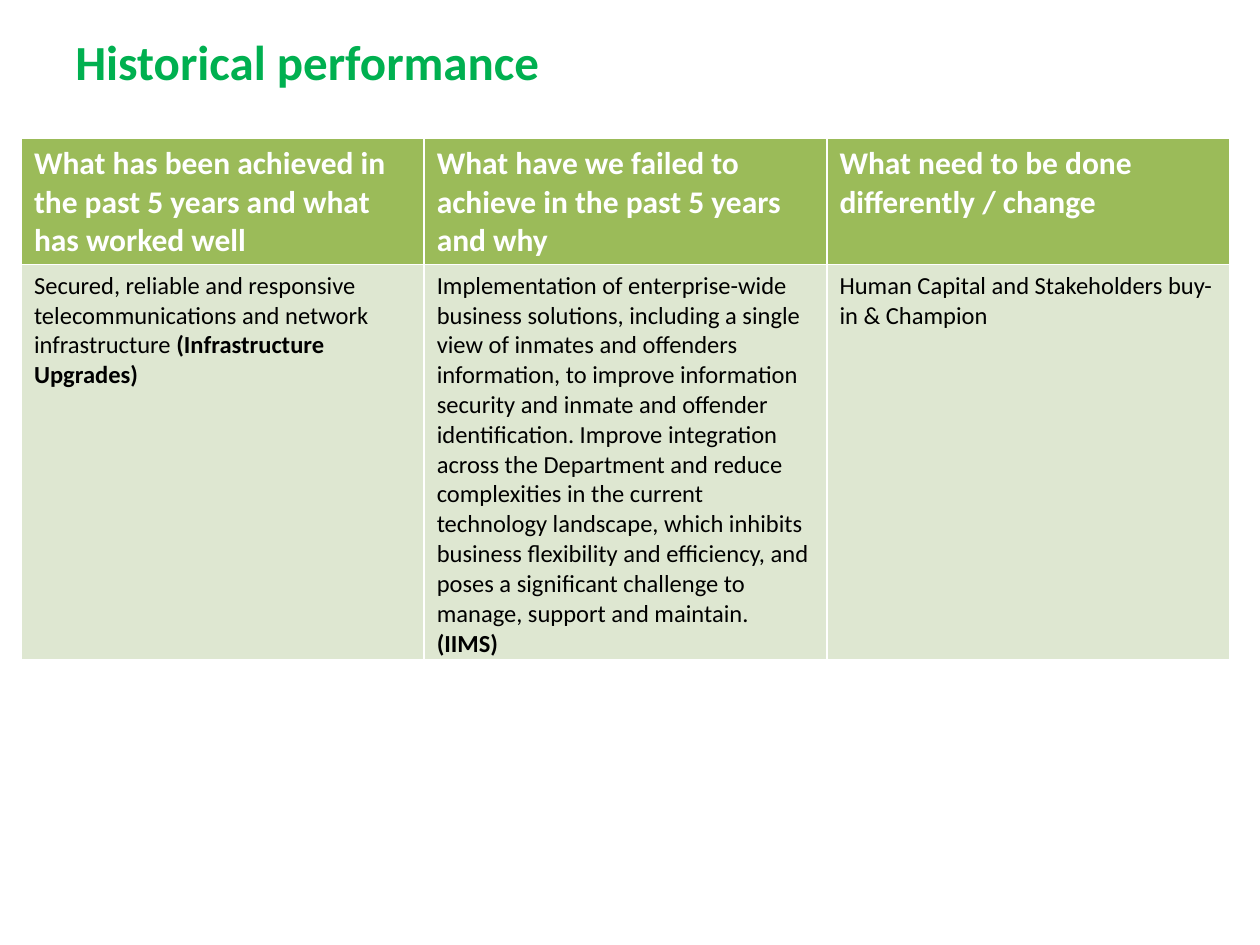
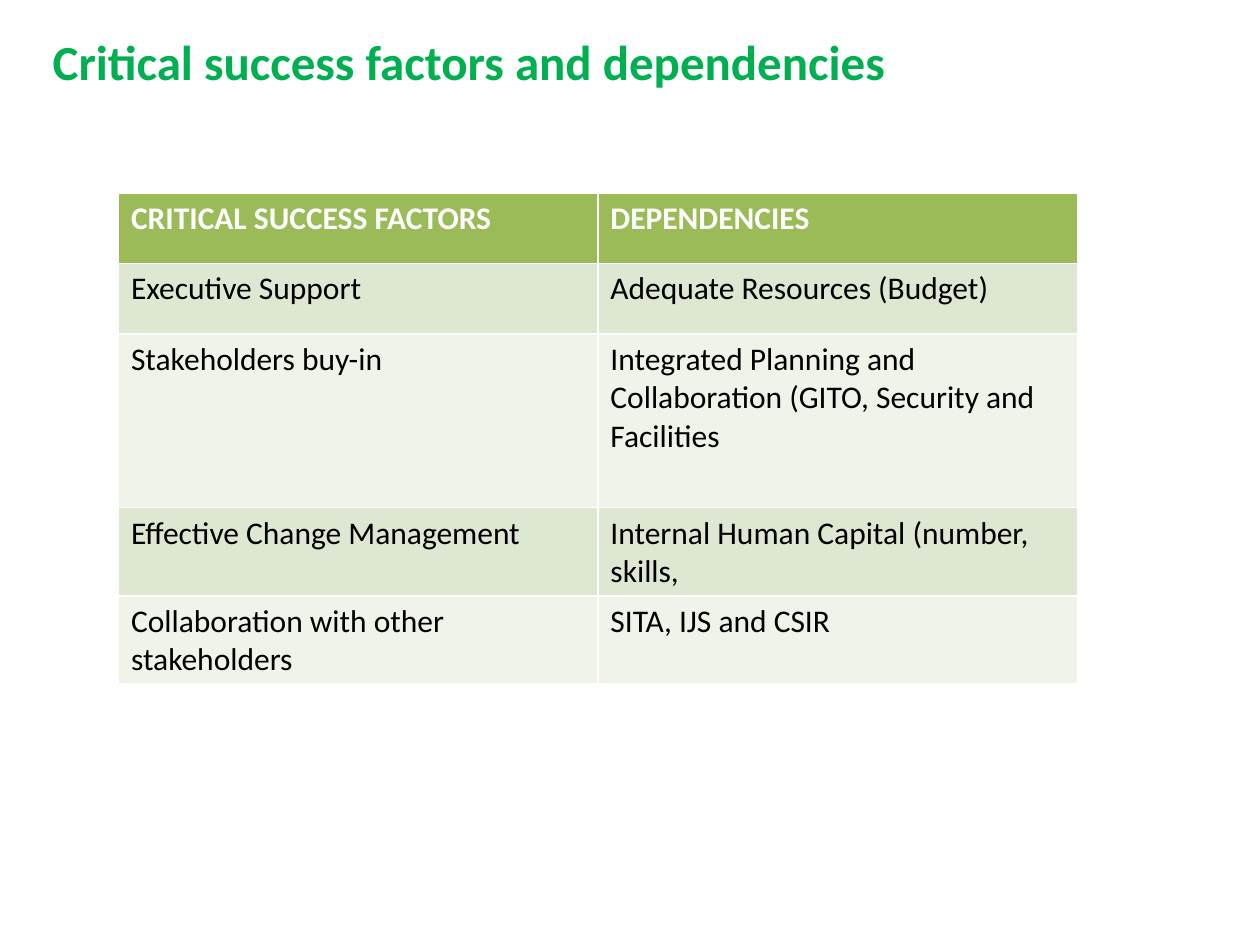
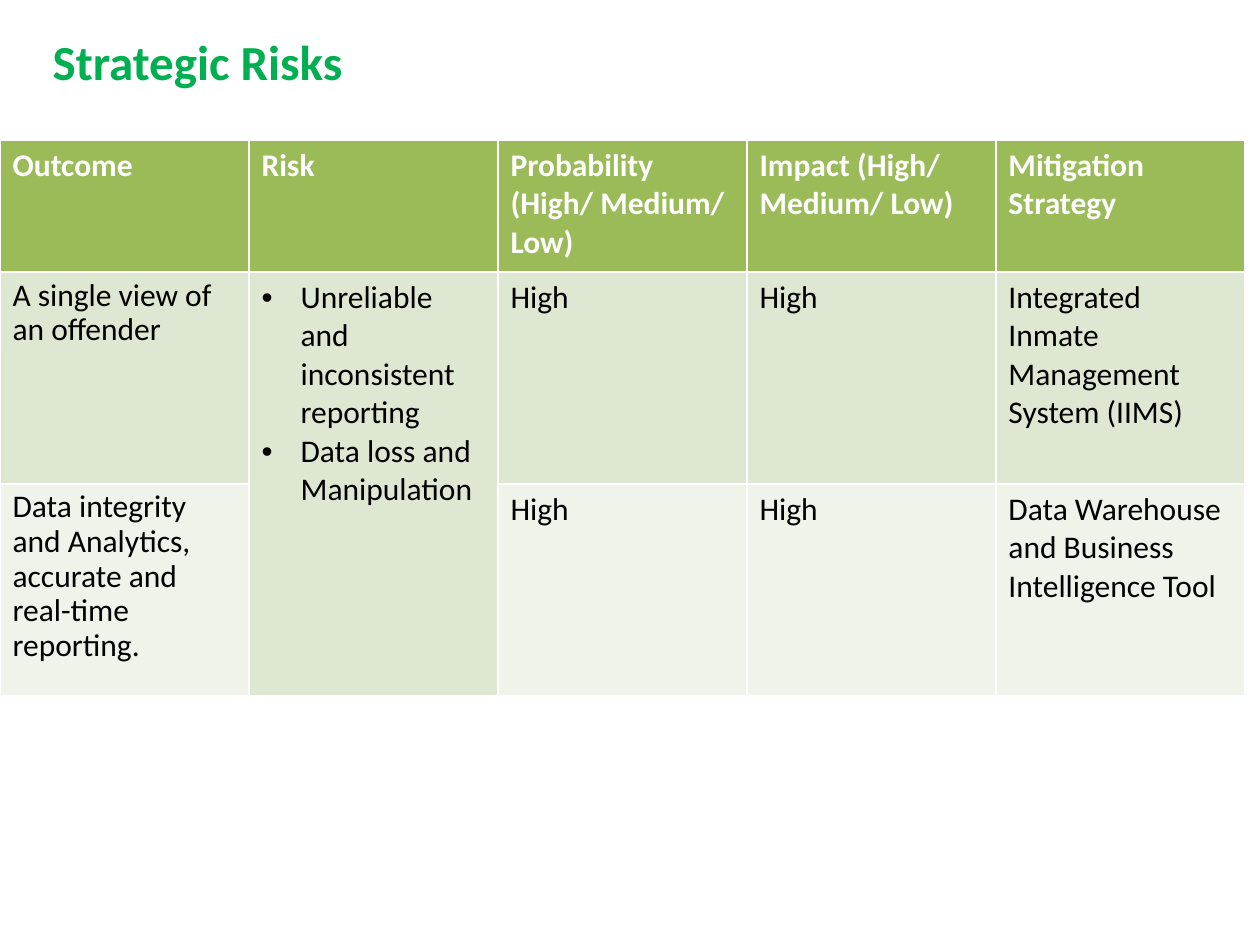
import dataclasses

import pptx
import pptx.dml.color
import pptx.enum.text
import pptx.oxml
import pptx.oxml.ns
import pptx.util

Inches = pptx.util.Inches
Pt = pptx.util.Pt
Color = pptx.dml.color.RGBColor.from_string


@dataclasses.dataclass(frozen=True)
class Theme:
    font: str = "Calibri"
    title: str = "00B050"
    head: str = "9BBB59"
    bands: tuple = ("DEE7D1", "EFF3EA")
    light: str = "FFFFFF"
    dark: str = "000000"
    large: int = 28
    normal: int = 18
    small: int = 14


@dataclasses.dataclass(frozen=True)
class Strong:
    """Plain text followed by a bold ending."""
    text: str
    end: str


class Deck:
    def __init__(self, theme):
        self.theme = theme
        self.show = pptx.Presentation()
        self.show.slide_width = Inches(10)
        self.show.slide_height = Inches(7.5)
        self.slide = None

    def page(self, title, left=0.32, width=9.45):
        self.slide = self.show.slides.add_slide(self.show.slide_layouts[6])
        box = self.slide.shapes.add_textbox(
            Inches(left), Inches(0.2), Inches(width), Inches(0.57))
        frame = box.text_frame
        frame.word_wrap = True
        frame.auto_size = pptx.enum.text.MSO_AUTO_SIZE.SHAPE_TO_FIT_TEXT
        frame.text = title
        self.style(frame.paragraphs[0], self.theme.large, self.theme.title, True)

    def style(self, para, size, color, bold=False):
        font = para.font
        font.name = self.theme.font
        font.size = Pt(size)
        font.bold = bold
        font.color.rgb = Color(color)

    def bullet(self, para):
        props = para._p.get_or_add_pPr()
        props.set("marL", str(Inches(0.31)))
        props.set("indent", str(-Inches(0.31)))
        space = pptx.oxml.ns.nsdecls("a")
        for mark in ('buFont typeface="Arial"', 'buChar char="•"'):
            props.append(pptx.oxml.parse_xml(f"<a:{mark} {space}/>"))

    def paint(self, cell, color):
        cell.fill.solid()
        cell.fill.fore_color.rgb = Color(color)

    def label(self, cell, value, size, color, bold):
        """Set one text, a Strong text, or a list of bullet points."""
        frame = cell.text_frame
        if isinstance(value, Strong):
            para = frame.paragraphs[0]
            para.add_run().text = value.text
            end = para.add_run()
            end.text = value.end
            end.font.bold = True
        elif isinstance(value, list):
            frame.text = "\n".join(value)
            for para in frame.paragraphs:
                self.bullet(para)
        else:
            frame.text = value
        for para in frame.paragraphs:
            self.style(para, size, color, bold)

    def table(self, left, top, width, heights, rows, size=None):
        """Draw a banded table of equal columns; None leaves a cell empty."""
        theme = self.theme
        count = len(rows[0])
        grid = self.slide.shapes.add_table(
            len(rows), count, Inches(left), Inches(top),
            Inches(width), Inches(sum(heights))).table
        for col in grid.columns:
            col.width = Inches(width / count)
        for num, (height, row) in enumerate(zip(heights, rows)):
            grid.rows[num].height = Inches(height)
            for col, value in enumerate(row):
                cell = grid.cell(num, col)
                if num == 0:
                    self.paint(cell, theme.head)
                    self.label(cell, value, theme.normal, theme.light, True)
                    continue
                self.paint(cell, theme.bands[(num - 1) % 2])
                if value is not None:
                    self.label(cell, value, size or theme.normal, theme.dark, False)
        return grid


def history(deck):
    deck.page("Historical performance", 0.5, 9)
    deck.table(0.17, 1.1, 9.59, (1, 3.13), [
        ("What has been achieved in the past 5 years and what has worked well",
         "What have we failed to achieve in the past 5 years and why",
         "What need to be done differently / change"),
        (Strong("Secured, reliable and responsive telecommunications and "
                "network infrastructure ", "(Infrastructure Upgrades)"),
         Strong("Implementation of enterprise-wide business solutions, "
                "including a single view of inmates and offenders information, "
                "to improve information security and inmate and offender "
                "identification. Improve integration across the Department and "
                "reduce complexities in the current technology landscape, which "
                "inhibits business flexibility and efficiency, and poses a "
                "significant challenge to manage, support and maintain. ",
                "(IIMS)"),
         "Human Capital and Stakeholders buy-in & Champion"),
    ], deck.theme.small)


def factors(deck):
    deck.page("Critical success factors and dependencies")
    deck.table(0.94, 1.53, 7.61, (0.56, 0.56, 1.38, 0.7, 0.7), [
        ("CRITICAL SUCCESS FACTORS", "DEPENDENCIES"),
        ("Executive Support", "Adequate Resources (Budget)"),
        ("Stakeholders buy-in",
         "Integrated Planning and Collaboration (GITO, Security and Facilities"),
        ("Effective Change Management", "Internal Human Capital (number, skills,"),
        ("Collaboration with other stakeholders", "SITA, IJS and CSIR"),
    ])


def risks(deck):
    deck.page("Strategic Risks")
    grid = deck.table(0, 1.11, 9.88, (1.05, 1.68, 1.68), [
        ("Outcome", "Risk", "Probability (High/ Medium/ Low)",
         "Impact (High/ Medium/ Low)", "Mitigation Strategy"),
        ("A single view of an offender",
         ["Unreliable and inconsistent reporting", "Data loss and Manipulation"],
         "High", "High", "Integrated Inmate Management System (IIMS)"),
        ("Data integrity and Analytics, accurate and real-time reporting.",
         None, "High", "High", "Data Warehouse and Business Intelligence Tool"),
    ])
    grid.cell(1, 1).merge(grid.cell(2, 1))
    for row in (1, 2):
        para = grid.cell(row, 0).text_frame.paragraphs[0]
        para.line_spacing = 0.9
        para.space_after = Pt(6)


def main():
    deck = Deck(Theme())
    history(deck)
    factors(deck)
    risks(deck)
    deck.show.save("out.pptx")


if __name__ == "__main__":
    main()
